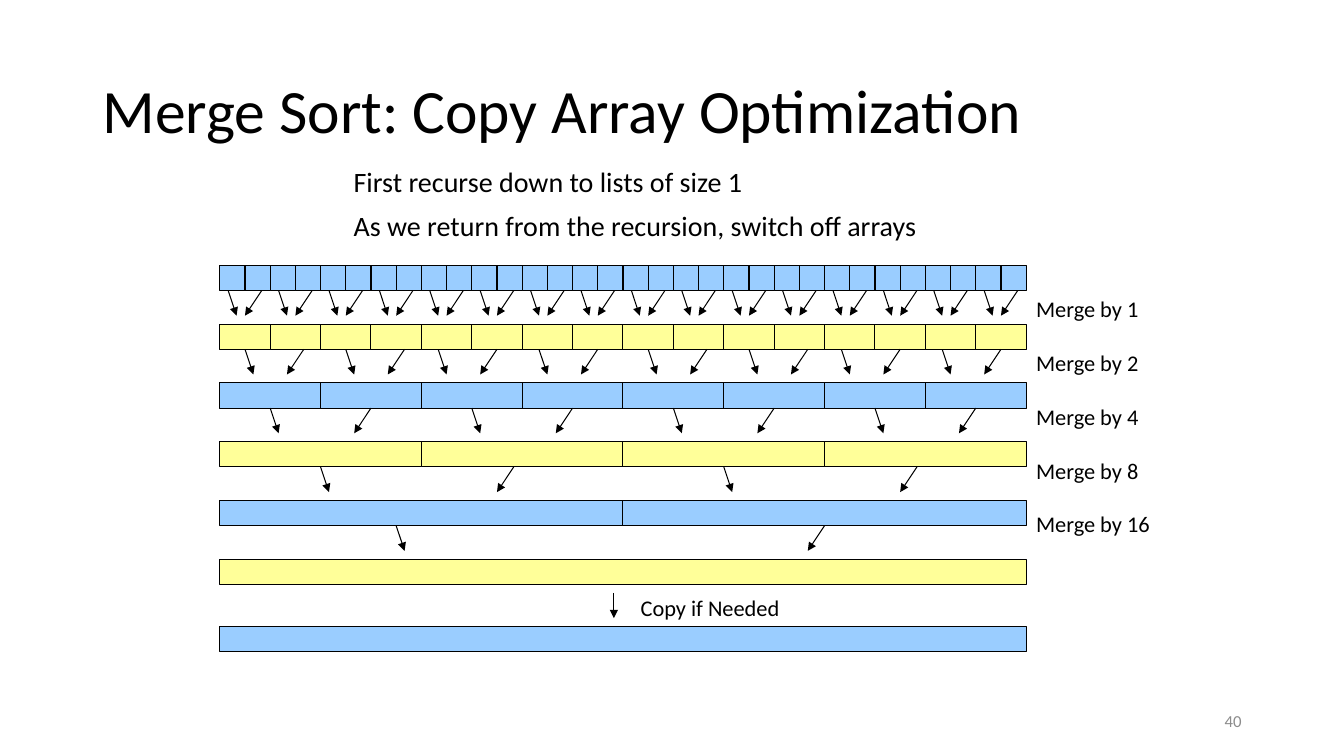
import pptx
import pptx.util
import pptx.dml.color
import pptx.enum.shapes
import pptx.enum.text
import pptx.oxml.ns
import lxml.etree

Pt = pptx.util.Pt
ALIGN = pptx.enum.text.PP_ALIGN
ANCHOR = pptx.enum.text.MSO_ANCHOR

BLACK, BLUE, YELLOW, GRAY = "000000", "9ACDFF", "FFFF99", "8C8C8C"

# Array geometry, in points
ARRAY_LEFT, ARRAY_TOP, ARRAY_WIDTH = 157, 189.5, 576
ROW_HEIGHT, ROW_PITCH = 18, 42
ARROW_HEIGHT = 18
FINAL_TOP = 447.5

# Number of lists in each row, and where the two arrows of each merge
# start, measured from the left edge of the merged pair
LIST_COUNTS = [32, 16, 8, 4, 2, 1]
ARROW_STARTS = [(6, 30), (18, 60), (36, 108), (72, 210), (126, 432)]
ARROW_SHIFTS = (6, -12)


def color(hex_string):
    return pptx.dml.color.RGBColor.from_string(hex_string)


def write_lines(shape, lines, size, text_color=BLACK, align=ALIGN.LEFT,
                line_spacing=None, space_before=0):
    """Put one paragraph per line into a shape."""
    frame = shape.text_frame
    frame.text = "\n".join(lines)
    for index, paragraph in enumerate(frame.paragraphs):
        paragraph.alignment = align
        paragraph.font.name = "Calibri"
        paragraph.font.size = Pt(size)
        paragraph.font.color.rgb = color(text_color)
        if line_spacing:
            paragraph.line_spacing = line_spacing
        if index:
            paragraph.space_before = Pt(space_before)


def add_text(slide, left, top, width, height, lines, size, wrap=True,
             anchor=ANCHOR.TOP, **style):
    box = slide.shapes.add_textbox(Pt(left), Pt(top), Pt(width), Pt(height))
    box.text_frame.word_wrap = wrap
    box.text_frame.vertical_anchor = anchor
    write_lines(box, lines, size, **style)


def add_array(slide, top, count, fill):
    """Draw one array row split into equal lists; return its boxes."""
    width = ARRAY_WIDTH / count
    boxes = []
    for index in range(count):
        box = slide.shapes.add_shape(
            pptx.enum.shapes.MSO_SHAPE.RECTANGLE,
            Pt(ARRAY_LEFT + index * width), Pt(top), Pt(width), Pt(ROW_HEIGHT))
        box.shadow.inherit = False
        box.fill.solid()
        box.fill.fore_color.rgb = color(fill)
        box.line.color.rgb = color(BLACK)
        box.line.width = Pt(0.75)
        boxes.append(box)
    return boxes


def add_arrow(slide, x, top, shift=0):
    arrow = slide.shapes.add_connector(
        pptx.enum.shapes.MSO_CONNECTOR.STRAIGHT,
        Pt(x), Pt(top), Pt(x + shift), Pt(top + ARROW_HEIGHT))
    arrow.line.color.rgb = color(BLACK)
    arrow.line.width = Pt(0.75)
    qn = pptx.oxml.ns.qn
    lxml.etree.SubElement(arrow.line._get_or_add_ln(), qn("a:tailEnd"),
                          type="triangle")
    lxml.etree.SubElement(arrow._element.spPr, qn("a:effectLst"))
    return arrow


def add_merge_arrows(slide, level, boxes, top):
    """Draw the two arrows that lead down from each pair of lists."""
    list_width = ARRAY_WIDTH / len(boxes)
    for index, box in enumerate(boxes):
        pair, side = divmod(index, 2)
        offset = ARROW_STARTS[level][side]
        # In the second row, every other two pairs sit slightly to the left
        if level == 1 and pair % 4 >= 2:
            offset -= 6
        x = ARRAY_LEFT + pair * 2 * list_width + offset
        arrow = add_arrow(slide, x, top, ARROW_SHIFTS[side])
        if offset == (side + 0.5) * list_width:
            arrow.begin_connect(box, 2)


def main():
    presentation = pptx.Presentation()
    presentation.slide_width = Pt(960)
    presentation.slide_height = Pt(540)
    slide = presentation.slides.add_slide(presentation.slide_layouts[5])

    # Title
    title = slide.shapes.title
    title.left, title.top = Pt(66), Pt(28.75)
    title.width, title.height = Pt(828), Pt(104.4)
    title.text_frame.auto_size = pptx.enum.text.MSO_AUTO_SIZE.NONE
    title.text_frame.vertical_anchor = ANCHOR.MIDDLE
    write_lines(title, ["Merge Sort: Copy Array Optimization"], 44,
                line_spacing=0.9)

    # Explanation
    add_text(slide, 245.5, 116.5, 427, 72,
             ["First recurse down to lists of size 1",
              "As we return from the recursion, switch off arrays"],
             20, line_spacing=0.9, space_before=10)

    # Arrays, alternating between the two buffers, with merge arrows
    for level, count in enumerate(LIST_COUNTS):
        top = ARRAY_TOP + level * ROW_PITCH
        boxes = add_array(slide, top, count, (BLUE, YELLOW)[level % 2])
        if count > 1:
            add_merge_arrows(slide, level, boxes, top + ROW_HEIGHT)

    # Final copy
    add_array(slide, FINAL_TOP, 1, BLUE)
    add_arrow(slide, 438.5, 423.5)
    add_text(slide, 450.5, 421, 117.5, 26.6, ["Copy if Needed"], 16, wrap=False)

    # Merge labels
    add_text(slide, 733, 207.5, 99.5, 201,
             [f"Merge by {2 ** level}" for level in range(5)],
             16, wrap=False, space_before=19.2)

    # Slide number
    add_text(slide, 678, 500.5, 216, 28.75, ["40"], 12, text_color=GRAY,
             align=ALIGN.RIGHT, anchor=ANCHOR.MIDDLE)

    presentation.save("out.pptx")


if __name__ == "__main__":
    main()
